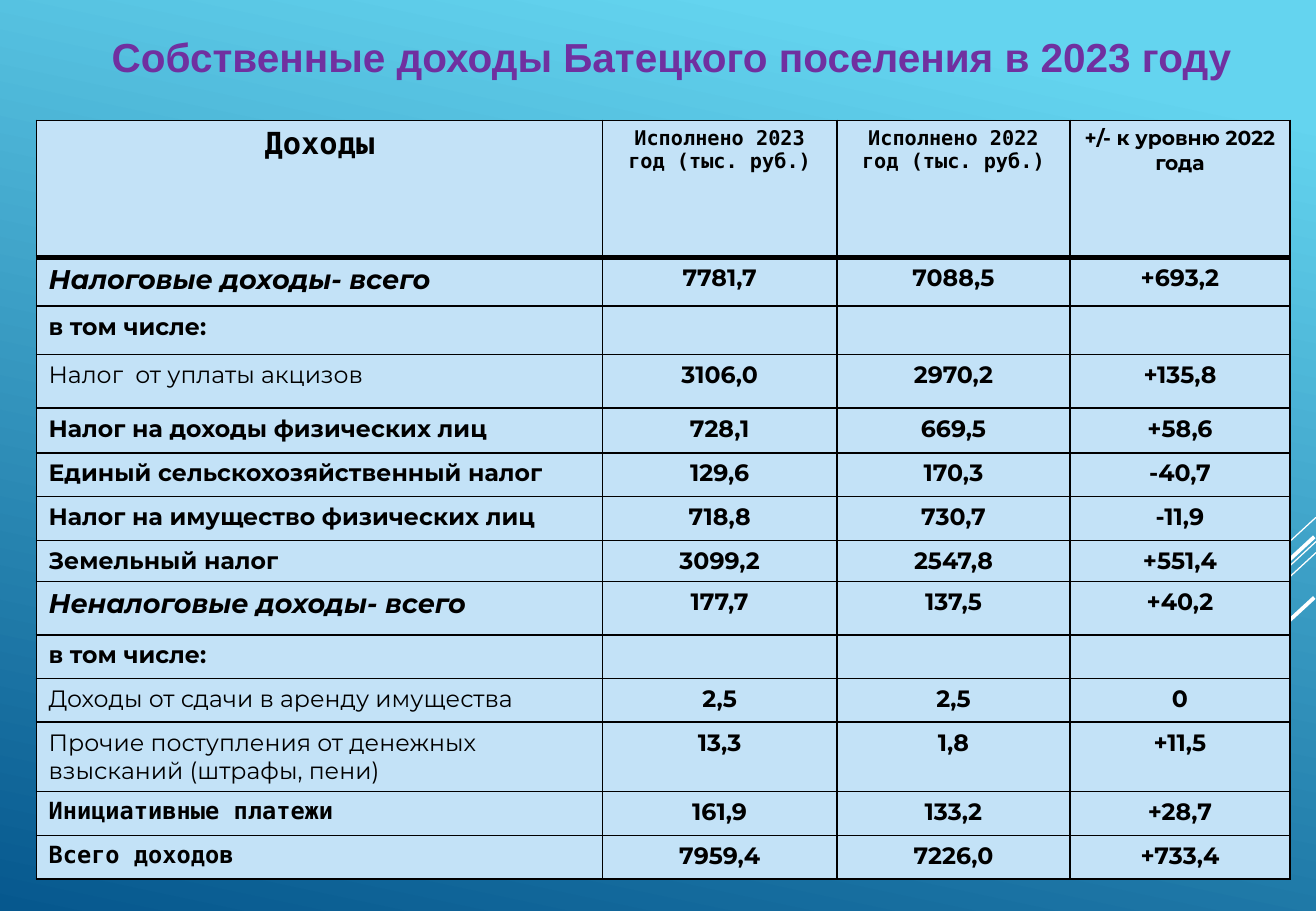
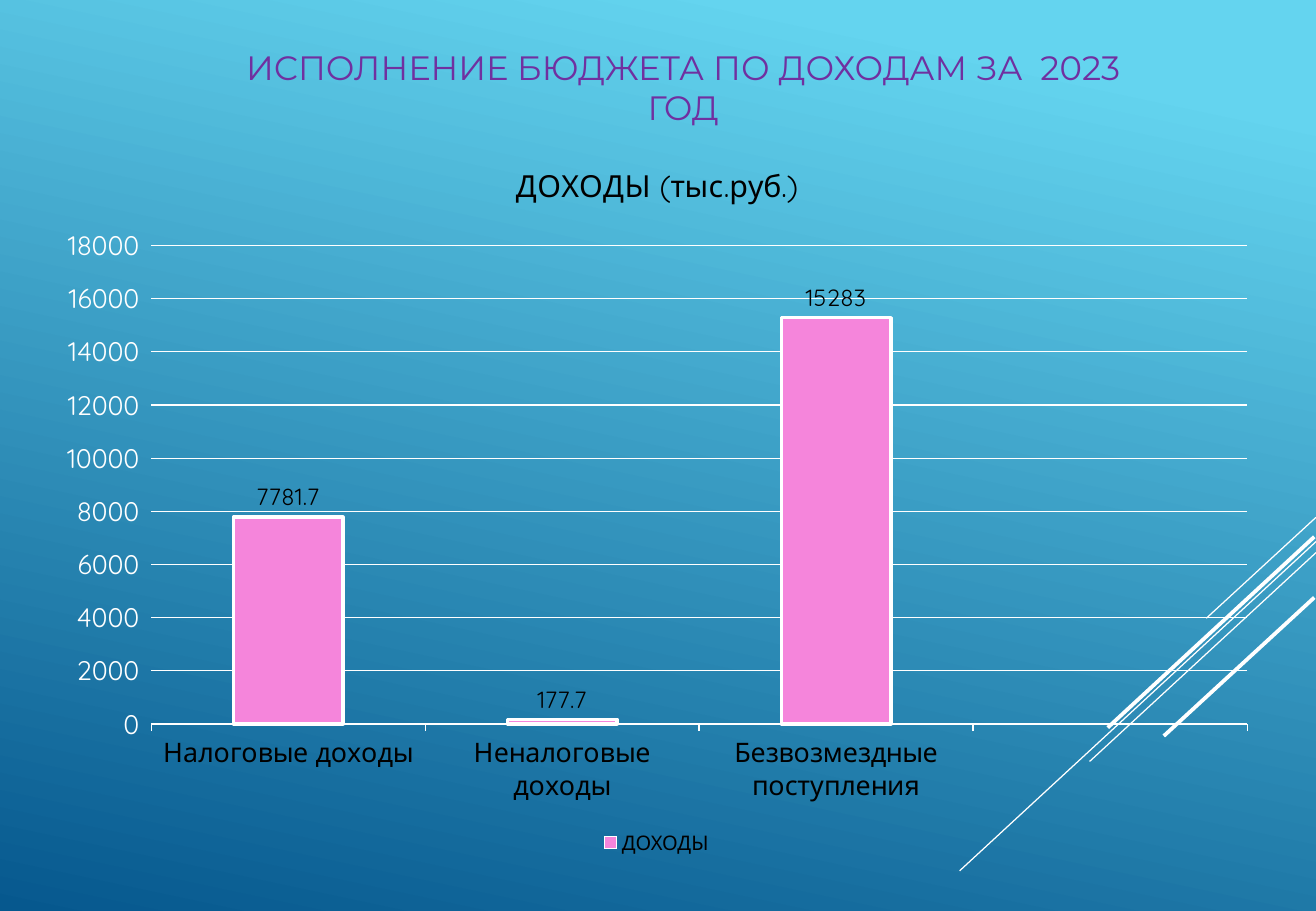
from lxml import etree
from pptx import Presentation
from pptx.chart import data
from pptx.dml.color import RGBColor
from pptx.enum import chart as chart_enum, shapes, text
from pptx.oxml import ns
from pptx.util import Pt

COLORS = {
    "sky": "64D4EF", "deep": "06588E", "title": "7030A0", "cell": "C3E2F7",
    "black": "000000", "white": "FFFFFF", "bar": "F585DB",
}
SANS, MONO, CHART_FONT = "Montserrat", "DejaVu Sans Mono", "Quicksand"

# Start x, start y, end x, end y, width
CORNER_LINES = [
    (780, 306.7, 715, 366.5, 0.75),
    (780, 321.1, 568.8, 516.2, 0.75),
    (780, 327.6, 645.8, 451.4, 0.75),
    (779, 318.2, 656.6, 431.3, 2.25),
    (779, 354.2, 689.8, 436.3, 2.25),
]

# Font, size, bold, italic
STYLES = {
    "heading": (MONO, 18, True, False),
    "column": (MONO, 12, True, False),
    "change": (SANS, 12, True, False),
    "total": (SANS, 16, True, True),
    "bold": (SANS, 14, True, False),
    "plain": (SANS, 14, False, False),
    "mono": (MONO, 14, True, False),
}

COLUMN_WIDTHS = [335.5, 139, 138.2, 130.3]
HEADER_HEIGHT = 81.4
HEADER = [
    ("Доходы", "heading"),
    ("Исполнено 2023 год (тыс. руб.)", "column"),
    ("Исполнено 2022 год (тыс. руб.)", "column"),
    ("+/- к уровню 2022 года", "change"),
]
# Height, label style, label, values
INCOME_ROWS = [
    (28.8, "total", "Налоговые доходы- всего", ("7781,7", "7088,5", "+693,2")),
    (28.8, "bold", "в том числе:", ("", "", "")),
    (31.7, "plain", "Налог  от уплаты акцизов", ("3106,0", "2970,2", "+135,8")),
    (26.6, "bold", "Налог на доходы физических лиц", ("728,1", "669,5", "+58,6")),
    (25.9, "bold", "Единый сельскохозяйственный налог", ("129,6", "170,3", "-40,7")),
    (25.9, "bold", "Налог на имущество физических лиц", ("718,8", "730,7", "-11,9")),
    (23.8, "bold", "Земельный налог", ("3099,2", "2547,8", "+551,4")),
    (31.7, "total", "Неналоговые доходы- всего", ("177,7", "137,5", "+40,2")),
    (25.9, "bold", "в том числе:", ("", "", "")),
    (25.9, "plain", "Доходы от сдачи в аренду имущества", ("2,5", "2,5", "0")),
    (41, "plain", "Прочие поступления от денежных взысканий (штрафы, пени)",
     ("13,3", "1,8", "+11,5")),
    (25.9, "mono", "Инициативные платежи", ("161,9", "133,2", "+28,7")),
    (25.9, "mono", "Всего доходов", ("7959,4", "7226,0", "+733,4")),
]


def rgb(name):
    return RGBColor.from_string(COLORS[name])


def set_font(font, name, size, color, bold=False, italic=False):
    font.name, font.size = name, Pt(size)
    font.bold, font.italic = bold, italic
    font.color.rgb = rgb(color)


def set_line(line, color, width):
    line.color.rgb = rgb(color)
    line.width = Pt(width)


def set_background(master):
    fill = master.background.fill
    fill.gradient()
    fill.gradient_angle = 258
    for stop, position, color in zip(fill.gradient_stops, (0.1, 1), ("sky", "deep")):
        stop.position = position
        stop.color.rgb = rgb(color)


def add_slide(presentation):
    """Add a blank slide with the diagonal lines in its lower right corner."""
    slide = presentation.slides.add_slide(presentation.slide_layouts[6])
    for *ends, width in CORNER_LINES:
        connector = slide.shapes.add_connector(
            shapes.MSO_CONNECTOR.STRAIGHT, *(Pt(value) for value in ends))
        set_line(connector.line, "white", width)
        etree.SubElement(connector._element.spPr, ns.qn("a:effectLst"))
    return slide


def add_title(slide, title, box, font, size, bold=False):
    frame = slide.shapes.add_textbox(*(Pt(value) for value in box)).text_frame
    frame.word_wrap = True
    frame.vertical_anchor = text.MSO_ANCHOR.MIDDLE
    frame.text = title
    paragraph = frame.paragraphs[0]
    paragraph.alignment = text.PP_ALIGN.CENTER
    set_font(paragraph.font, font, size, "title", bold)


def set_borders(cell, top, bottom):
    properties = cell._tc.get_or_add_tcPr()
    widths = {"a:lnL": 1, "a:lnR": 1, "a:lnT": top, "a:lnB": bottom}
    for index, (tag, width) in enumerate(widths.items()):
        border = etree.Element(ns.qn(tag), w=str(Pt(width)))
        fill = etree.SubElement(border, ns.qn("a:solidFill"))
        etree.SubElement(fill, ns.qn("a:srgbClr"), val=COLORS["black"])
        properties.insert(index, border)


def fill_cell(cell, content, style, centered):
    cell.fill.solid()
    cell.fill.fore_color.rgb = rgb("cell")
    cell.text = content
    if not content:
        cell.margin_top = cell.margin_bottom = 0
    paragraph = cell.text_frame.paragraphs[0]
    paragraph.alignment = text.PP_ALIGN.CENTER if centered else text.PP_ALIGN.LEFT
    font, size, bold, italic = STYLES[style]
    set_font(paragraph.font, font, size, "black", bold, italic)


def add_income_table(slide):
    rows = [(HEADER_HEIGHT, HEADER)]
    for height, style, label, values in INCOME_ROWS:
        rows.append((height, [(label, style)] + [(value, "bold") for value in values]))
    total_height = sum(height for height, _ in rows)
    table = slide.shapes.add_table(
        len(rows), len(COLUMN_WIDTHS), Pt(21.6), Pt(71.3),
        Pt(sum(COLUMN_WIDTHS)), Pt(total_height)).table
    table.first_row = table.horz_banding = False
    for column, width in zip(table.columns, COLUMN_WIDTHS):
        column.width = Pt(width)
    for row_index, (height, cells) in enumerate(rows):
        table.rows[row_index].height = Pt(height)
        for column_index, (content, style) in enumerate(cells):
            cell = table.cell(row_index, column_index)
            fill_cell(cell, content, style, row_index == 0 or column_index > 0)
            set_borders(cell, top=3 if row_index == 1 else 1,
                        bottom=3 if row_index == 0 else 1)


def style_axes(chart):
    category_axis, value_axis = chart.category_axis, chart.value_axis
    for axis, color in ((category_axis, "black"), (value_axis, "white")):
        axis.major_tick_mark = chart_enum.XL_TICK_MARK.OUTSIDE
        set_font(axis.tick_labels.font, CHART_FONT, 15.9, color)
    set_line(category_axis.format.line, "white", 0.75)
    value_axis.format.line.fill.background()
    value_axis.minimum_scale, value_axis.maximum_scale = 0, 18000
    value_axis.major_unit = 2000
    set_line(value_axis.major_gridlines.format.line, "white", 0.75)


def style_bars(plot):
    plot.gap_width = 150
    plot.vary_by_categories = False
    series = plot.series[0]
    series.invert_if_negative = False
    series.format.fill.solid()
    series.format.fill.fore_color.rgb = rgb("bar")
    set_line(series.format.line, "white", 2)
    labels = series.data_labels
    labels.show_value = True
    labels.position = chart_enum.XL_LABEL_POSITION.OUTSIDE_END
    set_font(labels.font, CHART_FONT, 13.9, "black")


def add_income_chart(slide):
    chart_data = data.CategoryChartData()
    chart_data.categories = [
        "Налоговые доходы", "Неналоговые доходы", "Безвозмездные поступления", ""]
    chart_data.add_series("ДОХОДЫ", (7781.7, 177.7, 15283, None))
    chart = slide.shapes.add_chart(
        chart_enum.XL_CHART_TYPE.COLUMN_CLUSTERED,
        Pt(25.2), Pt(81.4), Pt(728.6), Pt(428.4), chart_data).chart
    set_font(chart.font, CHART_FONT, 10, "white")
    chart.has_title = True
    chart.chart_title.include_in_layout = False
    title_frame = chart.chart_title.text_frame
    title_frame.text = "ДОХОДЫ (тыс.руб.)"
    set_font(title_frame.paragraphs[0].font, CHART_FONT, 18, "black")
    chart.has_legend = True
    chart.legend.position = chart_enum.XL_LEGEND_POSITION.BOTTOM
    chart.legend.include_in_layout = False
    set_font(chart.legend.font, CHART_FONT, 11.9, "black")
    style_axes(chart)
    style_bars(chart.plots[0])


def main():
    presentation = Presentation()
    presentation.slide_width, presentation.slide_height = Pt(780), Pt(540)
    set_background(presentation.slide_master)

    table_slide = add_slide(presentation)
    add_income_table(table_slide)
    add_title(table_slide, "Собственные доходы Батецкого поселения в 2023 году",
              (46, 15, 704, 37), "Arial", 24, bold=True)

    chart_slide = add_slide(presentation)
    add_title(chart_slide, "ИСПОЛНЕНИЕ БЮДЖЕТА ПО ДОХОДАМ ЗА  2023\vГОД",
              (49, 15, 712, 73.4), SANS, 20)
    add_income_chart(chart_slide)

    presentation.save("out.pptx")


if __name__ == "__main__":
    main()
